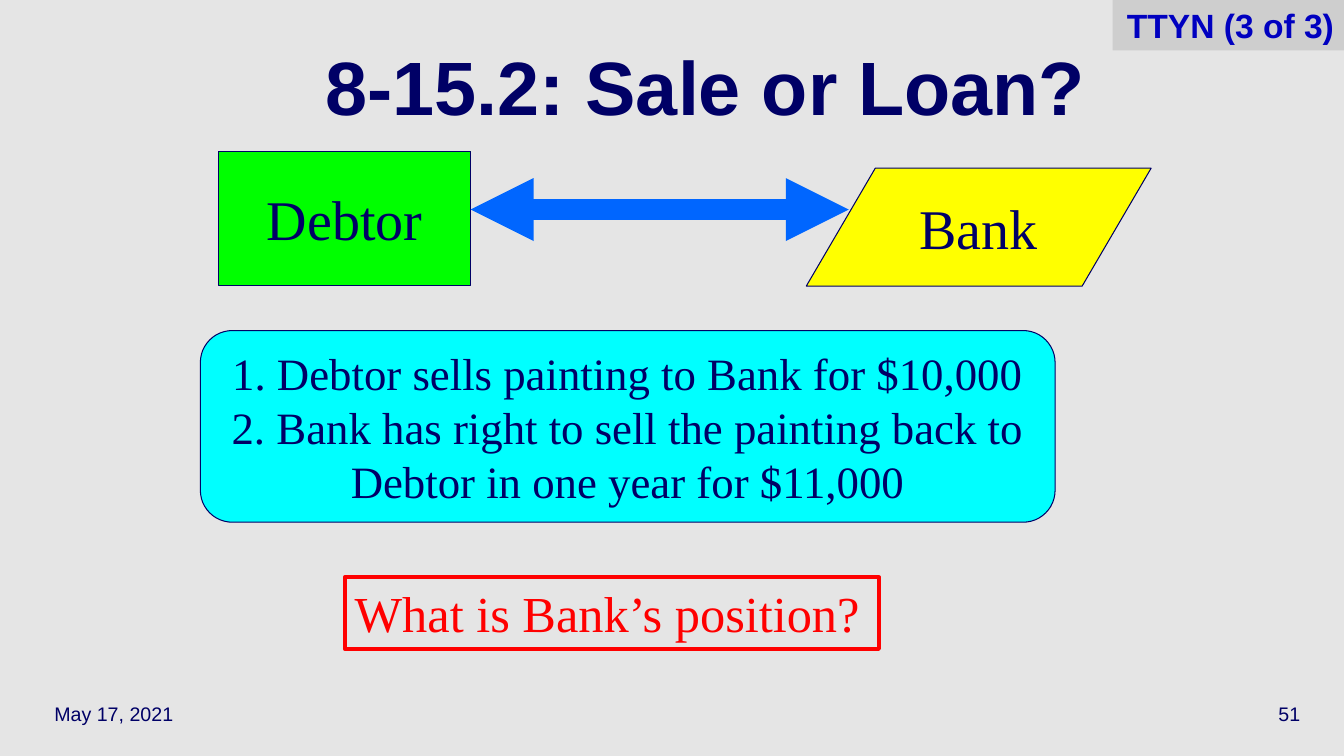
import pptx
import pptx.util
import pptx.dml.color
import pptx.enum.shapes
import pptx.enum.text
import pptx.oxml
import pptx.oxml.ns
from pptx.util import Cm

NAVY = "000066"
RED = "FF0000"
SERIF = "Times New Roman"
SANS = "Arial"
SHAPE = pptx.enum.shapes.MSO_SHAPE
ALIGN = pptx.enum.text.PP_ALIGN
ANCHOR = pptx.enum.text.MSO_ANCHOR


def rgb(color):
    return pptx.dml.color.RGBColor.from_string(color)


def write(sp, lines, size, font, color=NAVY, align=ALIGN.CENTER,
          anchor=ANCHOR.MIDDLE, bold=False, spacing=None, wrap=True):
    tf = sp.text_frame
    tf.word_wrap = wrap
    tf.vertical_anchor = anchor
    tf.text = "\n".join(lines)
    for p in tf.paragraphs:
        p.alignment = align
        p.line_spacing = spacing
        p.font.size = pptx.util.Pt(size)
        p.font.name = font
        p.font.bold = bold
        p.font.color.rgb = rgb(color)


def add_text(s, box, line, size, **style):
    sp = s.shapes.add_textbox(*map(Cm, box))
    write(sp, [line], size, SANS, **style)


def add_box(s, kind, box, lines, size, fill=None, line=NAVY, width=0.75,
            font=SERIF, **style):
    sp = s.shapes.add_shape(kind, *map(Cm, box))
    sp.shadow.inherit = False
    if fill:
        sp.fill.solid()
        sp.fill.fore_color.rgb = rgb(fill)
    else:
        sp.fill.background()
    if line:
        sp.line.color.rgb = rgb(line)
        sp.line.width = pptx.util.Pt(width)
    else:
        sp.line.fill.background()
    write(sp, lines, size, font, **style)


def add_double_arrow(s, x1, x2, y, color, width):
    c = s.shapes.add_connector(pptx.enum.shapes.MSO_CONNECTOR.STRAIGHT,
                               Cm(x1), Cm(y), Cm(x2), Cm(y))
    c.line.color.rgb = rgb(color)
    c.line.width = pptx.util.Pt(width)
    ln = c.line._get_or_add_ln()
    for tag in ("a:headEnd", "a:tailEnd"):
        end = pptx.oxml.xmlchemy.OxmlElement(tag)
        end.set("type", "triangle")
        ln.append(end)
    c._element.spPr.append(pptx.oxml.xmlchemy.OxmlElement("a:effectLst"))


def main():
    prs = pptx.Presentation()
    prs.slide_width, prs.slide_height = Cm(33.87), Cm(19.05)
    s = prs.slides.add_slide(prs.slide_layouts[6])
    s.background.fill.solid()
    s.background.fill.fore_color.rgb = rgb("E5E5E5")

    add_text(s, (1.12, 17.35, 7.06, 1.27), "May 17, 2021", 14, align=ALIGN.LEFT)
    add_text(s, (25.96, 17.35, 7.06, 1.27), "51", 14, align=ALIGN.RIGHT)
    add_text(s, (2.26, 0.84, 31.04, 3.18), "8-15.2: Sale or Loan?", 54,
             bold=True, spacing=0.7)

    add_box(s, SHAPE.FLOWCHART_DATA, (20.32, 4.24, 8.69, 2.97), ["Bank"], 40,
            fill="FFFF00", wrap=False)
    add_box(s, SHAPE.FLOWCHART_PROCESS, (5.51, 3.81, 6.35, 3.38), ["Debtor"], 40,
            fill="00FF00", wrap=False)
    add_double_arrow(s, 11.86, 21.39, 5.28, "0066FF", 15)

    add_box(s, SHAPE.FLOWCHART_ALTERNATE_PROCESS, (5.05, 8.33, 21.54, 4.83),
            ["1. Debtor sells painting to Bank for $10,000",
             "2. Bank has right to sell the painting back to Debtor in one year for $11,000"],
            32, fill="00FFFF")
    add_box(s, SHAPE.RECTANGLE, (8.69, 14.55, 13.46, 1.8),
            ["What is Bank’s position?"], 36, line=RED, width=3, color=RED,
            align=ALIGN.LEFT, anchor=ANCHOR.TOP)
    add_box(s, SHAPE.RECTANGLE, (28.04, 0, 5.83, 1.27), ["TTYN (3 of 3)"], 24,
            fill="CECECE", line=None, font=SANS, color="0000C0", bold=True,
            align=ALIGN.RIGHT, anchor=ANCHOR.TOP)

    prs.save("out.pptx")


if __name__ == "__main__":
    main()
